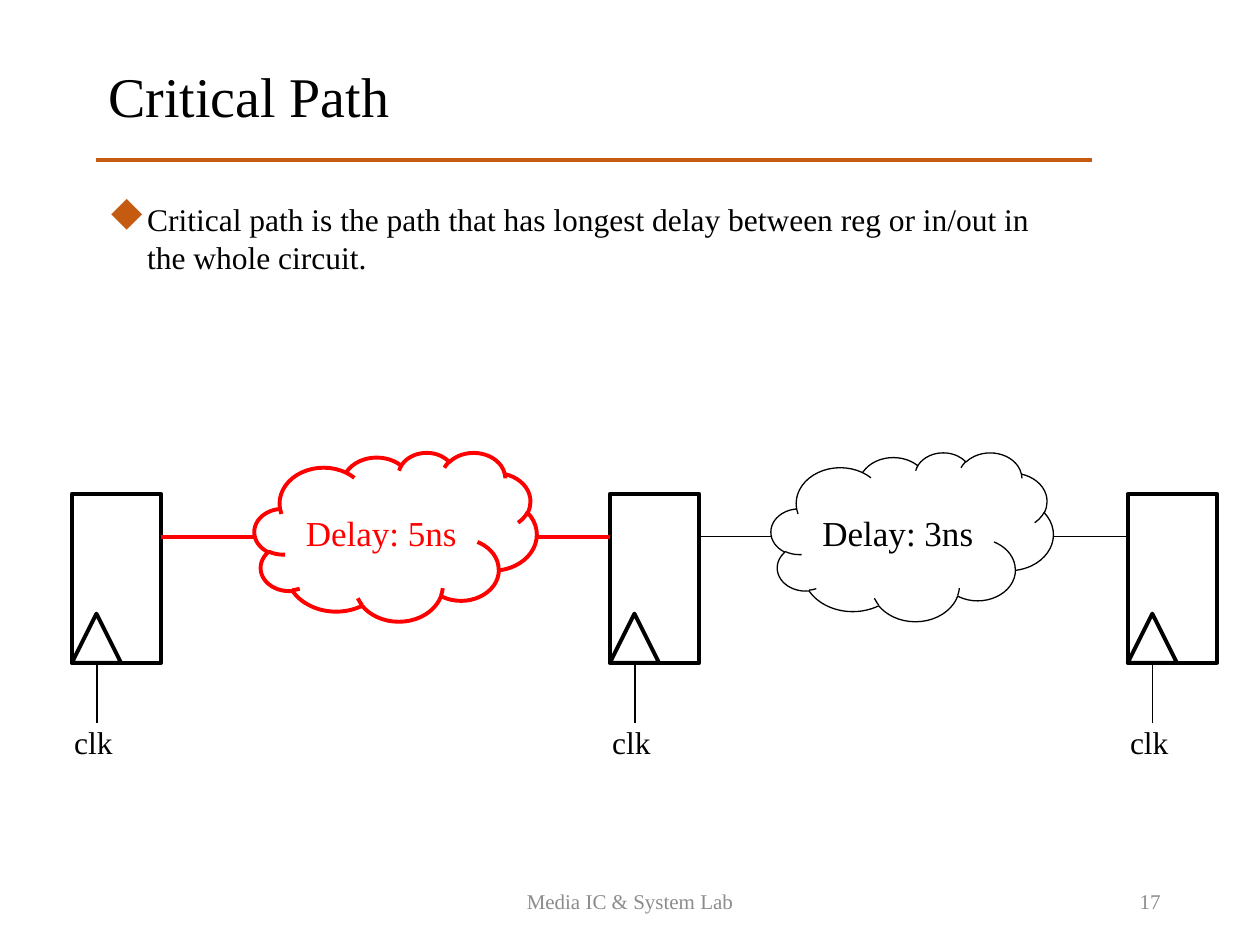
import pptx
import pptx.util
import pptx.dml.color
import pptx.enum.shapes
import pptx.enum.text
import pptx.oxml
import pptx.oxml.ns
import lxml.etree

Inches = pptx.util.Inches
Pt = pptx.util.Pt
Align = pptx.enum.text.PP_ALIGN
Kind = pptx.enum.shapes.MSO_SHAPE
MIDDLE = pptx.enum.text.MSO_ANCHOR.MIDDLE
qn = pptx.oxml.ns.qn
BLACK, RED, RUST, GRAY, WHITE = "000000", "FF0000", "C55A11", "8C8C8C", "FFFFFF"


def paint(part, color):
    if hasattr(part, "solid"):
        part.solid()
        part = part.fore_color
    elif hasattr(part, "color"):
        part = part.color
    part.rgb = pptx.dml.color.RGBColor.from_string(color)


def write(frame, words, size, color, align=Align.LEFT):
    para = frame.paragraphs[0]
    para.alignment = align
    run = para.add_run()
    run.text = words
    run.font.name = "Times New Roman"
    run.font.size = Pt(size)
    paint(run.font, color)
    return para


deck = pptx.Presentation()
deck.slide_width, deck.slide_height = Inches(10), Inches(7.5)
slide = deck.slides.add_slide(deck.slide_layouts[6])
shapes = slide.shapes

mid = 4.26
regs = [0.57, 4.84, 8.95]
clouds = [(2.02, "Delay: 5ns", RED, 2.25), (6.12, "Delay: 3ns", BLACK, 0.75)]
solids = []
wires = [(0.76, 1.27, 8.67, 1.27, RUST, 2.25)]
labels = [
    (7.06, 6.95, 2.25, 0.4, "17", 12, GRAY, Align.RIGHT),
    (3.31, 6.95, 3.38, 0.4, "Media IC & System Lab", 12, GRAY, Align.CENTER),
    (0.76, 0.44, 8.15, 0.64, "Critical Path", 32, BLACK, Align.LEFT),
]

for left, words, color, width in clouds:
    solids.append((Kind.CLOUD, left, 3.59, 2.24, 1.34, color, width, words))
for left in regs:
    solids.append((Kind.RECTANGLE, left, 3.92, 0.71, 1.34, BLACK, 2.25, ""))
    solids.append((Kind.ISOSCELES_TRIANGLE, left, 4.87, 0.39, 0.39, BLACK, 2.25, ""))
    wires.append((left + 0.2, 5.74, left + 0.2, 5.26, BLACK, 0.75))
    labels.append((left - 0.08, 5.69, 0.55, 0.4, "clk", 18, BLACK, Align.LEFT))
for (left, words, color, width), start, end in zip(clouds, regs, regs[1:]):
    wires.append((start + 0.71, mid, left + 0.01, mid, color, width))
    wires.append((left + 2.24, mid, end, mid, color, width))

for kind, left, top, wide, high, color, width, words in solids:
    shape = shapes.add_shape(kind, Inches(left), Inches(top), Inches(wide), Inches(high))
    shape.shadow.inherit = False
    if kind == Kind.ISOSCELES_TRIANGLE:
        shape.fill.background()
    else:
        paint(shape.fill, WHITE)
    paint(shape.line, color)
    shape.line.width = Pt(width)
    if words:
        shape.text_frame.word_wrap = False
        shape.text_frame.vertical_anchor = MIDDLE
        write(shape.text_frame, words, 20, color)

for left, top, right, base, color, width in wires:
    wire = shapes.add_connector(pptx.enum.shapes.MSO_CONNECTOR.STRAIGHT,
                                Inches(left), Inches(top), Inches(right), Inches(base))
    paint(wire.line, color)
    wire.line.width = Pt(width)
    lxml.etree.SubElement(wire._element.spPr, qn("a:effectLst"))

for left, top, wide, high, words, size, color, align in labels:
    box = shapes.add_textbox(Inches(left), Inches(top), Inches(wide), Inches(high))
    box.text_frame.word_wrap = True
    if color == GRAY:
        box.text_frame.vertical_anchor = MIDDLE
    write(box.text_frame, words, size, color, align)

body = shapes.add_textbox(Inches(0.76), Inches(1.54), Inches(7.62), Inches(2.22))
body.text_frame.word_wrap = True
para = write(body.text_frame, "Critical path is the path that has longest delay between "
             "reg or in/out in the whole circuit.", 18, BLACK)
props = para._p.get_or_add_pPr()
props.set("marL", str(Inches(0.31)))
props.set("indent", str(Inches(-0.31)))
tint = lxml.etree.SubElement(props, qn("a:buClr"))
lxml.etree.SubElement(tint, qn("a:srgbClr"), val=RUST)
lxml.etree.SubElement(props, qn("a:buSzPct"), val="120000")
lxml.etree.SubElement(props, qn("a:buFont"), typeface="Wingdings", charset="2")
lxml.etree.SubElement(props, qn("a:buChar"), char="u")

deck.save("out.pptx")
